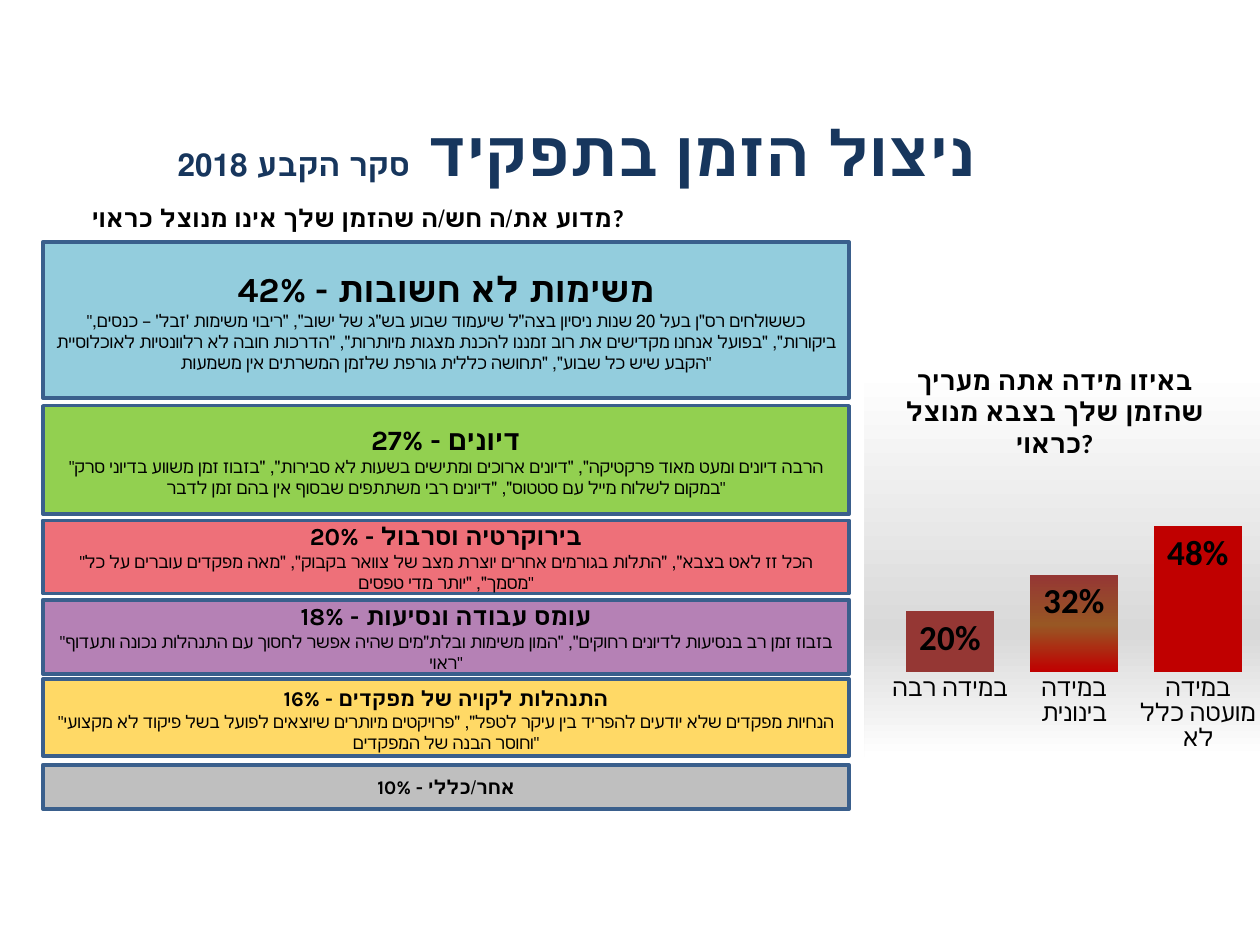
from lxml import etree
from pptx import Presentation
from pptx import util as u
from pptx.chart import data
from pptx.dml.color import RGBColor
from pptx.enum import chart as c
from pptx.enum import shapes, text
from pptx.oxml import ns, parse_xml

NAVY = RGBColor(0x17, 0x36, 0x5D)
BLACK = RGBColor(0, 0, 0)
WHITE = RGBColor(0xFF, 0xFF, 0xFF)
SILVER = RGBColor(0xD9, 0xD9, 0xD9)
BORDER = RGBColor(0x3A, 0x5F, 0x8C)
BLUE = RGBColor(0x93, 0xCD, 0xDD)
GREEN = RGBColor(0x92, 0xD0, 0x50)
CORAL = RGBColor(0xEE, 0x70, 0x79)
PURPLE = RGBColor(0xB5, 0x81, 0xB5)
YELLOW = RGBColor(0xFF, 0xD9, 0x66)
GRAY = RGBColor(0xBF, 0xBF, 0xBF)
BRICK = RGBColor(0x95, 0x37, 0x34)
BROWN = RGBColor(0x98, 0x57, 0x24)
RED = RGBColor(0xC0, 0, 0)

MIDDLE, TOP = text.MSO_ANCHOR.MIDDLE, text.MSO_ANCHOR.TOP
REASONS = [
    (1.92, 1.24, BLUE, MIDDLE, 20, "42% - משימות לא חשובות",
     "\"כששולחים רס\"ן בעל 20 שנות ניסיון בצה\"ל שיעמוד שבוע בש\"ג של ישוב\", "
     "\"ריבוי משימות 'זבל' – כנסים, ביקורות\", "
     "\"בפועל אנחנו מקדישים את רוב זמננו להכנת מצגות מיותרות\", "
     "\"הדרכות חובה לא רלוונטיות לאוכלוסיית הקבע שיש כל שבוע\", "
     "\"תחושה כללית גורפת שלזמן המשרתים אין משמעות\""),
    (3.22, 0.86, GREEN, MIDDLE, 16, "27% - דיונים",
     "\"הרבה דיונים ומעט מאוד פרקטיקה\", \"דיונים ארוכים ומתישים בשעות לא סבירות\", "
     "\"בזבוז זמן משווע בדיוני סרק במקום לשלוח מייל עם סטטוס\", "
     "\"דיונים רבי משתתפים שבסוף אין בהם זמן לדבר\""),
    (4.13, 0.58, CORAL, MIDDLE, 14, "20% - בירוקרטיה וסרבול",
     "\"הכל זז לאט בצבא\", \"התלות בגורמים אחרים יוצרת מצב של צוואר בקבוק\", "
     "\"מאה מפקדים עוברים על כל מסמך\", \"יותר מדי טפסים\""),
    (4.76, 0.59, PURPLE, MIDDLE, 14, "18% - עומס עבודה ונסיעות",
     "\"בזבוז זמן רב בנסיעות לדיונים רחוקים\", "
     "\"המון משימות ובלת\"מים שהיה אפשר לחסוך עם התנהלות נכונה ותעדוף ראוי\""),
    (5.39, 0.61, YELLOW, TOP, 12, "16% - התנהלות לקויה של מפקדים",
     "\"הנחיות מפקדים שלא יודעים להפריד בין עיקר לטפל\", "
     "\"פרויקטים מיותרים שיוצאים לפועל בשל פיקוד לא מקצועי וחוסר הבנה של המפקדים\""),
    (6.07, 0.35, GRAY, MIDDLE, 11, "10% - אחר/כללי", None),
]


def style(font, size, name="Calibri", color=BLACK, bold=True):
    """Set the size, family, colour and weight of a font."""
    font.size, font.name, font.bold = u.Pt(size), name, bold
    font.color.rgb = color


def place_title(page, left, top, width, height):
    """Place the right-to-left title with its smaller survey name."""
    title = page.shapes.title
    title.left, title.top, title.width, title.height = left, top, width, height
    frame = title.text_frame
    frame.vertical_anchor = MIDDLE
    para = frame.paragraphs[0]
    para.alignment = text.PP_ALIGN.RIGHT
    para._p.get_or_add_pPr().set("rtl", "1")
    for words, size in (("ניצול הזמן בתפקיד ", 36), ("סקר הקבע 2018", 18)):
        span = para.add_run()
        span.text = words
        style(span.font, size, color=NAVY)


def add_question(page, left, top, width, height, words, size, align):
    """Add a bold question in a text box."""
    box = page.shapes.add_textbox(left, top, width, height)
    frame = box.text_frame
    frame.word_wrap = True
    frame.auto_size = text.MSO_AUTO_SIZE.SHAPE_TO_FIT_TEXT
    para = frame.paragraphs[0]
    para.text, para.alignment = words, align
    style(para.font, size)


def add_reason(page, left, top, width, height, color, anchor, size, heading, quotes):
    """Add one coloured reason box with its heading and quotes."""
    box = page.shapes.add_shape(shapes.MSO_SHAPE.RECTANGLE, left, top, width, height)
    box.shadow.inherit = False
    box.fill.solid()
    box.fill.fore_color.rgb = color
    box.line.color.rgb, box.line.width = BORDER, u.Pt(2)
    frame = box.text_frame
    frame.word_wrap, frame.vertical_anchor = True, anchor
    para = frame.paragraphs[0]
    para.text, para.alignment = heading, text.PP_ALIGN.CENTER
    style(para.font, size, "Karla")
    if quotes:
        para = frame.add_paragraph()
        para.text, para.alignment = quotes, text.PP_ALIGN.CENTER
        style(para.font, 10, "Karla", bold=False)


def gradient_properties(stops):
    """Return chart shape properties with a vertical gradient and no line."""
    marks = "".join(f'<a:gs pos="{place * 1000}"><a:srgbClr val="{color}"/></a:gs>'
                    for place, color in stops)
    return parse_xml(
        f'<c:spPr {ns.nsdecls("c", "a")}><a:gradFill><a:gsLst>{marks}</a:gsLst>'
        '<a:lin ang="5400000" scaled="0"/></a:gradFill><a:ln><a:noFill/></a:ln></c:spPr>')


def set_plot_layout(chart, x, y, w, h):
    """Fix the inner plot area as fractions of the chart."""
    area = chart._chartSpace.chart.plotArea
    for old in area.findall(ns.qn("c:layout")):
        area.remove(old)
    layout = etree.Element(ns.qn("c:layout"))
    manual = etree.SubElement(layout, ns.qn("c:manualLayout"))
    for tag, value in (("layoutTarget", "inner"), ("xMode", "edge"), ("yMode", "edge"),
                       ("x", x), ("y", y), ("w", w), ("h", h)):
        etree.SubElement(manual, ns.qn(f"c:{tag}")).set("val", str(value))
    area.insert(0, layout)


def add_usage_chart(page, left, top, width, height):
    """Add the column chart of how well time is used."""
    numbers = data.CategoryChartData(number_format="0%")
    numbers.categories = ["במידה רבה", "במידה בינונית", "במידה מועטה כלל לא"]
    numbers.add_series("Series 1", (0.2, 0.32, 0.48))
    chart = page.shapes.add_chart(c.XL_CHART_TYPE.COLUMN_CLUSTERED,
                                  left, top, width, height, numbers).chart
    chart.has_legend = chart.has_title = False
    style(chart.font, 20)
    chart._chartSpace.chart.addnext(
        gradient_properties([(0, WHITE), (68, SILVER), (100, WHITE)]))
    set_plot_layout(chart, 0.06, 0, 0.94, 0.78)

    values, categories = chart.value_axis, chart.category_axis
    values.minimum_scale, values.maximum_scale = 0, 1
    values.has_major_gridlines = values.visible = False
    categories.major_tick_mark = c.XL_TICK_MARK.NONE
    categories.format.line.fill.background()
    style(categories.tick_labels.font, 14, bold=False)

    plot = chart.plots[0]
    plot.gap_width, plot.vary_by_categories = 41, False
    series = plot.series[0]
    for index, color in enumerate((BRICK, BROWN, RED)):
        fill = series.points[index].format.fill
        fill.solid()
        fill.fore_color.rgb = color
    plain = series._element.findall(ns.qn("c:dPt"))[1].find(ns.qn("c:spPr"))
    plain.getparent().replace(
        plain, gradient_properties([(0, BRICK), (52, BROWN), (100, RED)]))
    labels = series.data_labels
    labels.show_value, labels.position = True, c.XL_LABEL_POSITION.INSIDE_END
    labels.number_format, labels.number_format_is_linked = "0%", False
    style(labels.font, 20)


def main():
    """Build and save the deck."""
    deck = Presentation()
    deck.slide_width, deck.slide_height = u.Inches(10), u.Inches(7.5)
    page = deck.slides.add_slide(deck.slide_layouts[5])
    place_title(page, u.Inches(0.63), u.Inches(0.94), u.Inches(7.21), u.Inches(0.52))
    add_question(page, u.Inches(0.63), u.Inches(1.56), u.Inches(5.01), u.Inches(0.34),
                 "מדוע את/ה חש/ה שהזמן שלך אינו מנוצל כראוי?", 14, text.PP_ALIGN.LEFT)
    for top, height, *content in REASONS:
        add_reason(page, u.Inches(0.34), u.Inches(top), u.Inches(6.4), u.Inches(height),
                   *content)
    add_usage_chart(page, u.Inches(6.86), u.Inches(2.93), u.Inches(3.14), u.Inches(3.08))
    add_question(page, u.Inches(7.01), u.Inches(2.84), u.Inches(2.72), u.Inches(0.86),
                 "באיזו מידה אתה מעריך שהזמן שלך בצבא מנוצל כראוי?", 15,
                 text.PP_ALIGN.CENTER)
    deck.save("out.pptx")


if __name__ == "__main__":
    main()
